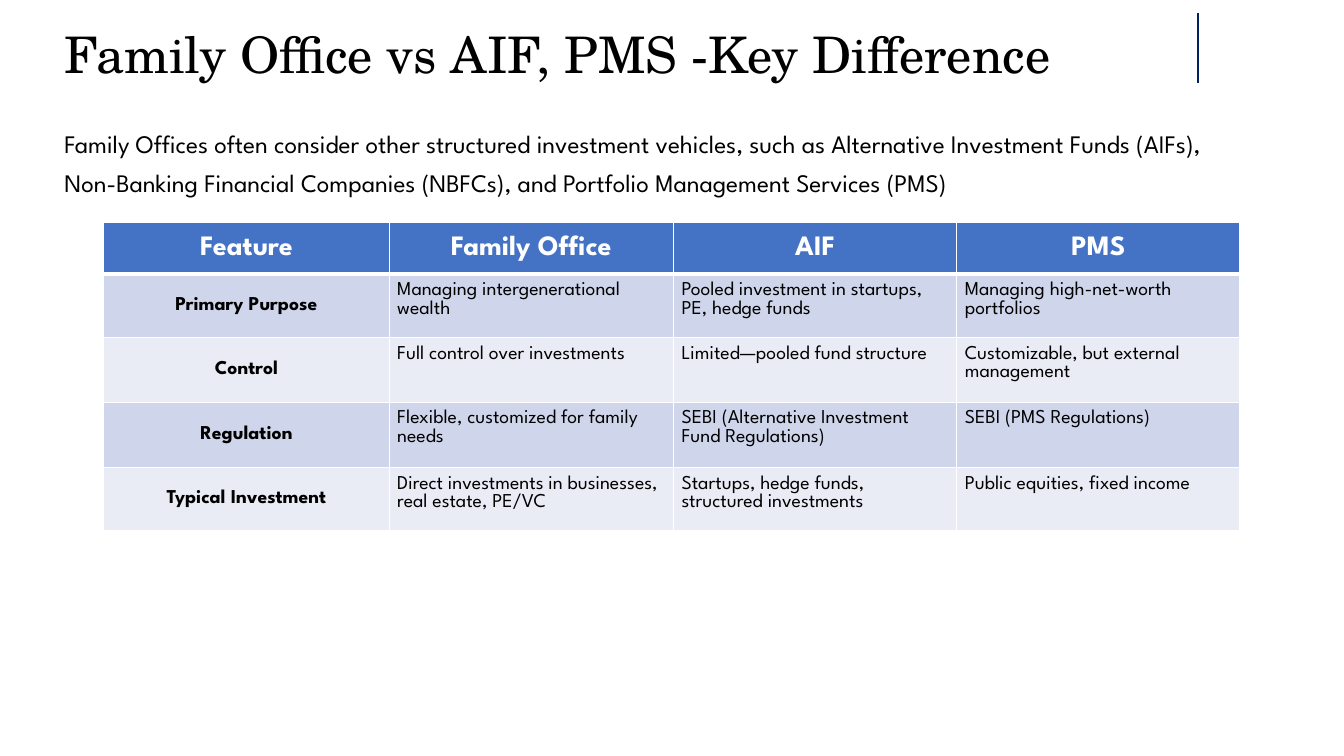
from lxml.etree import SubElement
from pptx import Presentation
from pptx.dml.color import RGBColor
from pptx.enum.shapes import MSO_CONNECTOR
from pptx.enum.text import MSO_ANCHOR as Anchor, PP_ALIGN as Align
from pptx.oxml.ns import qn
from pptx.util import Inches, Pt

COLORS = {
    "text": "000000",
    "white": "FFFFFF",
    "accent": "002060",
    "header": "4472C4",
    "odd_row": "CFD5EA",
    "even_row": "E9EBF5",
}
TITLE_FONT = "TeX Gyre Schola"
BODY_FONT = "League Spartan"

TITLE = "Family Office vs AIF, PMS -Key Difference"
INTRO = (
    "Family Offices often consider other structured investment vehicles, such as "
    "Alternative Investment Funds (AIFs), Non-Banking Financial Companies (NBFCs), "
    "and Portfolio Management Services (PMS)"
)
COMPARISON = [
    ["Feature", "Family Office", "AIF", "PMS"],
    ["Primary Purpose", "Managing intergenerational wealth",
     "Pooled investment in startups, PE, hedge funds",
     "Managing high-net-worth portfolios"],
    ["Control", "Full control over investments", "Limited—pooled fund structure",
     "Customizable, but external management"],
    ["Regulation", "Flexible, customized for family needs",
     "SEBI (Alternative Investment Fund Regulations)", "SEBI (PMS Regulations)"],
    ["Typical Investment", "Direct investments in businesses, real estate, PE/VC",
     "Startups, hedge funds, structured investments", "Public equities, fixed income"],
]
COLUMN_WIDTHS = [2.83, 2.82, 2.81, 2.81]
ROW_HEIGHTS = [0.51, 0.63, 0.64, 0.65, 0.62]


def rgb(name):
    return RGBColor.from_string(COLORS[name])


class SlideBuilder:
    def __init__(self, slide):
        self.slide = slide

    def style(self, paragraph, size, font, color="text", bold=False):
        for run in paragraph.runs:
            run.font.name = font
            run.font.size = Pt(size)
            run.font.bold = bold
            run.font.color.rgb = rgb(color)

    def text(self, content, left, top, width, height, size, font, line_spacing=1.0):
        box = self.slide.shapes.add_textbox(
            Inches(left), Inches(top), Inches(width), Inches(height))
        frame = box.text_frame
        frame.word_wrap = True
        frame.text = content
        paragraph = frame.paragraphs[0]
        paragraph.line_spacing = line_spacing
        self.style(paragraph, size, font)

    def vertical_line(self, x, top, bottom, color, width):
        line = self.slide.shapes.add_connector(
            MSO_CONNECTOR.STRAIGHT, Inches(x), Inches(top), Inches(x), Inches(bottom))
        line.line.color.rgb = rgb(color)
        line.line.width = Pt(width)
        SubElement(line._element.spPr, qn("a:effectLst"))

    def borders(self, cell, bottom_width, top_width):
        """Draw white borders; call before filling, as borders precede the fill."""
        properties = cell._tc.get_or_add_tcPr()
        widths = {"lnL": 1, "lnR": 1, "lnT": top_width, "lnB": bottom_width}
        for side, width in widths.items():
            border = SubElement(properties, qn(f"a:{side}"), w=str(Pt(width)))
            fill = SubElement(border, qn("a:solidFill"))
            SubElement(fill, qn("a:srgbClr"), val=COLORS["white"])

    def cell(self, cell, content, row, column):
        is_header = row == 0
        is_label = is_header or column == 0
        self.borders(cell, 3 if is_header else 1, 3 if row == 1 else 1)
        cell.fill.solid()
        row_color = "odd_row" if row % 2 else "even_row"
        cell.fill.fore_color.rgb = rgb("header" if is_header else row_color)
        cell.margin_left = cell.margin_right = Inches(0.08)
        cell.margin_top = cell.margin_bottom = Inches(0.08)
        cell.vertical_anchor = Anchor.MIDDLE if is_label else Anchor.TOP
        cell.text_frame.text = content
        paragraph = cell.text_frame.paragraphs[0]
        paragraph.alignment = Align.CENTER if is_label else Align.LEFT
        self.style(paragraph, 20 if is_header else 14, BODY_FONT,
                   "white" if is_header else "text", is_label)

    def table(self, rows, left, top, column_widths, row_heights):
        table = self.slide.shapes.add_table(
            len(rows), len(column_widths), Inches(left), Inches(top),
            Inches(sum(column_widths)), Inches(sum(row_heights))).table
        for column, width in zip(table.columns, column_widths):
            column.width = Inches(width)
        for row, height in zip(table.rows, row_heights):
            row.height = Inches(height)
        for row, contents in enumerate(rows):
            for column, content in enumerate(contents):
                self.cell(table.cell(row, column), content, row, column)


def main():
    presentation = Presentation()
    presentation.slide_width = Inches(13.33)
    presentation.slide_height = Inches(7.5)
    builder = SlideBuilder(presentation.slides.add_slide(presentation.slide_layouts[6]))

    builder.vertical_line(11.88, 0.13, 0.82, "accent", 1.5)
    builder.text(TITLE, 0.54, 0.18, 12.55, 0.71, 36, TITLE_FONT)
    builder.table(COMPARISON, 1.03, 2.21, COLUMN_WIDTHS, ROW_HEIGHTS)
    builder.text(INTRO, 0.54, 1.13, 11.49, 0.75, 18, BODY_FONT, line_spacing=1.3)
    presentation.save("out.pptx")


if __name__ == "__main__":
    main()
